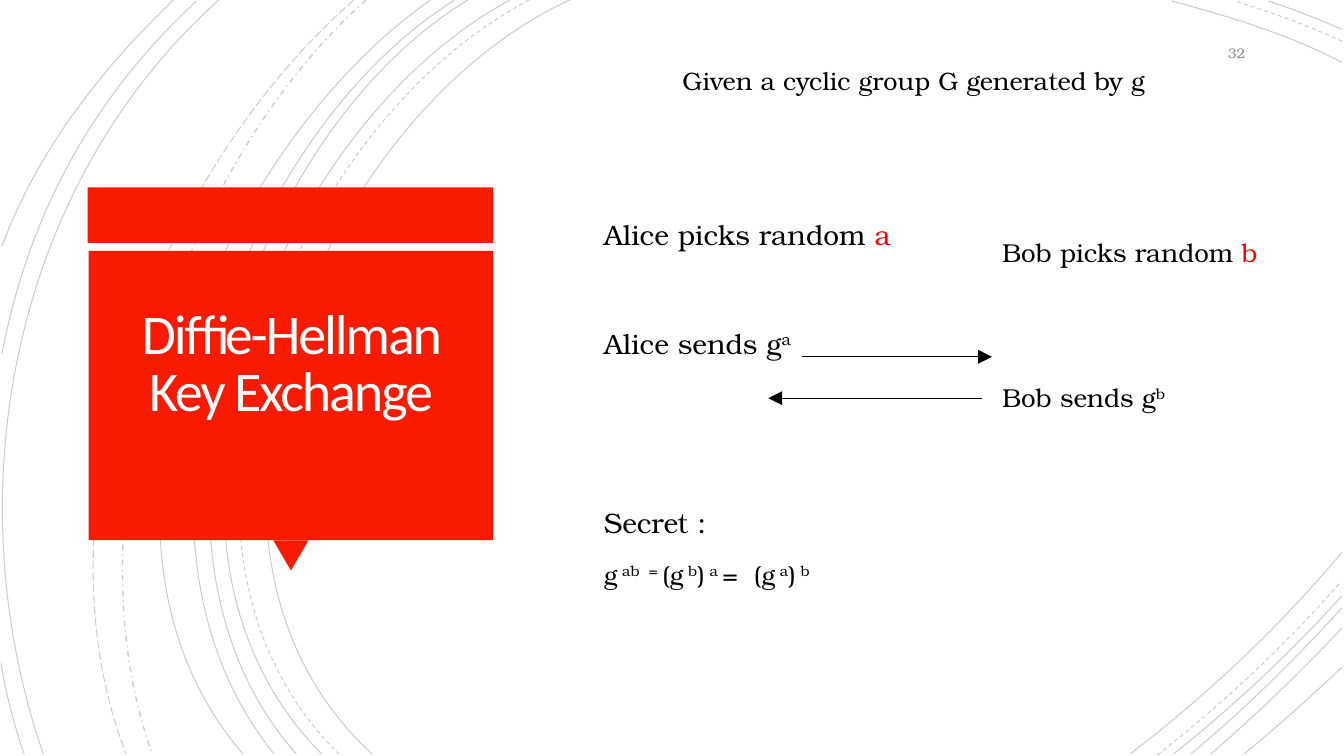
from lxml import etree
from pptx import Presentation
from pptx.dml.color import RGBColor
from pptx.enum.dml import MSO_LINE
from pptx.enum.shapes import MSO_CONNECTOR, MSO_SHAPE
from pptx.enum.text import MSO_ANCHOR, PP_ALIGN
from pptx.oxml.ns import qn
from pptx.util import Pt

PX = 9144
SOLID, DASH = MSO_LINE.SOLID, MSO_LINE.DASH
LONG_DASH, DASH_DOT = MSO_LINE.LONG_DASH, MSO_LINE.DASH_DOT
RECTANGLE, TRIANGLE = MSO_SHAPE.RECTANGLE, MSO_SHAPE.ISOSCELES_TRIANGLE
TOP, MIDDLE = MSO_ANCHOR.TOP, MSO_ANCHOR.MIDDLE
LEFT, CENTER, RIGHT = PP_ALIGN.LEFT, PP_ALIGN.CENTER, PP_ALIGN.RIGHT
STRAIGHT = MSO_CONNECTOR.STRAIGHT
BLACK, RED, ORANGE, WHITE, GRAY = "000000", "FF0000", "F81B02", "FFFEFF", "8C8C8C"
SUPERSCRIPT = "30000"

ARCS = [
    (SOLID, (565, 0), (315, 115), (143, 540), (369, 748)),
    (SOLID, (1331, 62), (1278, 34), (1218, 16), (1162, 1)),
    (SOLID, (1121, 748), (1197, 690), (1269, 622), (1331, 548)),
    (DASH, (525, 0), (285, 125), (123, 537), (336, 748)),
    (DASH, (1331, 41), (1297, 25), (1260, 12), (1225, 1)),
    (DASH, (1148, 749), (1213, 698), (1275, 640), (1330, 577)),
    (SOLID, (506, 0), (270, 127), (110, 537), (319, 748)),
    (SOLID, (1331, 29), (1307, 19), (1283, 9), (1258, 1)),
    (SOLID, (1164, 748), (1223, 701), (1280, 648), (1331, 591)),
    (SOLID, (464, 0), (244, 133), (110, 541), (294, 748)),
    (SOLID, (1181, 748), (1234, 704), (1284, 655), (1331, 603)),
    (SOLID, (451, 0), (231, 138), (97, 533), (272, 748)),
    (SOLID, (1201, 748), (1246, 709), (1290, 667), (1331, 623)),
    (SOLID, (427, 0), (217, 147), (53, 529), (241, 748)),
    (SOLID, (1234, 748), (1267, 721), (1299, 692), (1331, 662)),
    (DASH_DOT, (363, 0), (176, 166), (65, 509), (151, 748)),
    (LONG_DASH, (351, 0), (157, 169), (29, 499), (125, 748)),
    (SOLID, (217, 0), (11, 185), (-46, 490), (43, 748)),
    (SOLID, (195, 1), (92, 96), (28, 214), (2, 351)),
    (SOLID, (1, 658), (6, 689), (14, 719), (24, 748)),
    (SOLID, (172, 0), (100, 69), (37, 150), (2, 244)),
]

ALICE_LINES = [
    (20, 0, [("Alice picks random ", BLACK, False), ("a", RED, False)]),
    (20, 49, [("Alice sends g", BLACK, False), ("a", BLACK, True)]),
    (20, 99, [("Secret :", BLACK, False)]),
    (18, 10, [("g", BLACK, False), (" ab  = ", BLACK, True),
              ("(g", BLACK, False), (" b", BLACK, True),
              (")", BLACK, False), (" a ", BLACK, True),
              ("=  (g", BLACK, False), (" a", BLACK, True),
              (")", BLACK, False), (" b", BLACK, True)]),
]
BOB_LINES = [
    (18.5, 0, [("Bob picks random ", BLACK, False), ("b", RED, False)]),
    (18.5, 79, [("Bob sends g", BLACK, False), ("b", BLACK, True)]),
]


def color(value):
    return RGBColor.from_string(value)


def px(*values):
    return [value * PX for value in values]


class SlideBuilder:
    serif = "TeX Gyre Bonum"
    sans = "Calibri"

    def __init__(self, page):
        self.shapes = page.shapes

    def arc(self, dash, start, *controls):
        builder = self.shapes.build_freeform(*start, scale=PX)
        builder.add_line_segments(controls, close=False)
        curve = builder.convert_to_shape()
        outline = curve.element.find(".//" + qn("a:path"))
        bezier = etree.SubElement(outline, qn("a:cubicBezTo"))
        for segment in outline.findall(qn("a:lnTo")):
            bezier.append(segment[0])
            outline.remove(segment)
        curve.shadow.inherit = False
        curve.fill.background()
        curve.line.color.rgb = color(BLACK)
        curve.line.width = Pt(1 if dash == DASH_DOT else 0.75)
        curve.line.dash_style = dash
        ink = curve.line._ln.find(".//" + qn("a:srgbClr"))
        etree.SubElement(ink, qn("a:alpha"), val="20000")

    def block(self, kind, left, top, width, height, rotation=0):
        box = self.shapes.add_shape(kind, *px(left, top, width, height))
        box.rotation = rotation
        box.shadow.inherit = False
        box.fill.solid()
        box.fill.fore_color.rgb = color(ORANGE)
        box.line.fill.background()

    def title(self, text, left, top, width, height):
        box = self.shapes.title
        box.left, box.top, box.width, box.height = px(left, top, width, height)
        box.element.getparent().append(box.element)
        frame = box.text_frame
        frame.word_wrap = True
        frame.vertical_anchor = MIDDLE
        (frame.margin_left, frame.margin_top,
         frame.margin_right, frame.margin_bottom) = px(25, 25, 25, 82)
        frame.text = text
        para = frame.paragraphs[0]
        para.alignment = CENTER
        para.line_spacing = 0.85
        para.font.name, para.font.size = self.sans, Pt(40)
        para.font.color.rgb = color(WHITE)
        para.runs[0]._r.get_or_add_rPr().set("spc", "-150")

    def text(self, lines, left, top, width, height, spacing=1.0,
             anchor=TOP, align=LEFT):
        box = self.shapes.add_textbox(*px(left, top, width, height))
        frame = box.text_frame
        frame.word_wrap = True
        frame.vertical_anchor = anchor
        for index, (size, before, spans) in enumerate(lines):
            para = frame.add_paragraph() if index else frame.paragraphs[0]
            para.alignment = align
            para.line_spacing = spacing
            para.space_before = Pt(before)
            para.font.name, para.font.size = self.serif, Pt(size)
            for words, ink, raised in spans:
                span = para.add_run()
                span.text = words
                span.font.color.rgb = color(ink)
                if raised:
                    span._r.get_or_add_rPr().set("baseline", SUPERSCRIPT)

    def arrow(self, start_x, end_x, y):
        line = self.shapes.add_connector(STRAIGHT, *px(start_x, y, end_x, y))
        line.line.color.rgb = color(BLACK)
        line.line.width = Pt(0.75)
        etree.SubElement(line.line._ln, qn("a:tailEnd"),
                         type="triangle", w="lg", len="lg")
        etree.SubElement(line.element.spPr, qn("a:effectLst"))


def main():
    deck = Presentation()
    deck.slide_width, deck.slide_height = px(1333, 750)
    slide = SlideBuilder(deck.slides.add_slide(deck.slide_layouts[5]))
    for arc in ARCS:
        slide.arc(*arc)
    slide.block(RECTANGLE, 87, 186, 402, 55)
    slide.block(TRIANGLE, 271, 536, 35, 30, rotation=180)
    slide.block(RECTANGLE, 88, 249, 401, 287)
    slide.title("Diffie-Hellman Key Exchange", 97, 257, 383, 269)
    slide.text(ALICE_LINES, 589, 204, 658, 400, spacing=1.2)
    slide.text([(10, 0, [("32", GRAY, False)])], 1145, 35, 100, 35,
               anchor=MIDDLE, align=RIGHT)
    slide.text(BOB_LINES, 984, 227, 379, 189, spacing=1.1)
    slide.arrow(795, 984, 354)
    slide.arrow(974, 762, 395)
    slide.text([(18, 0, [("Given a cyclic group G generated by g", BLACK, False)])],
               667, 60, 543, 40)
    deck.save("out.pptx")


if __name__ == "__main__":
    main()
